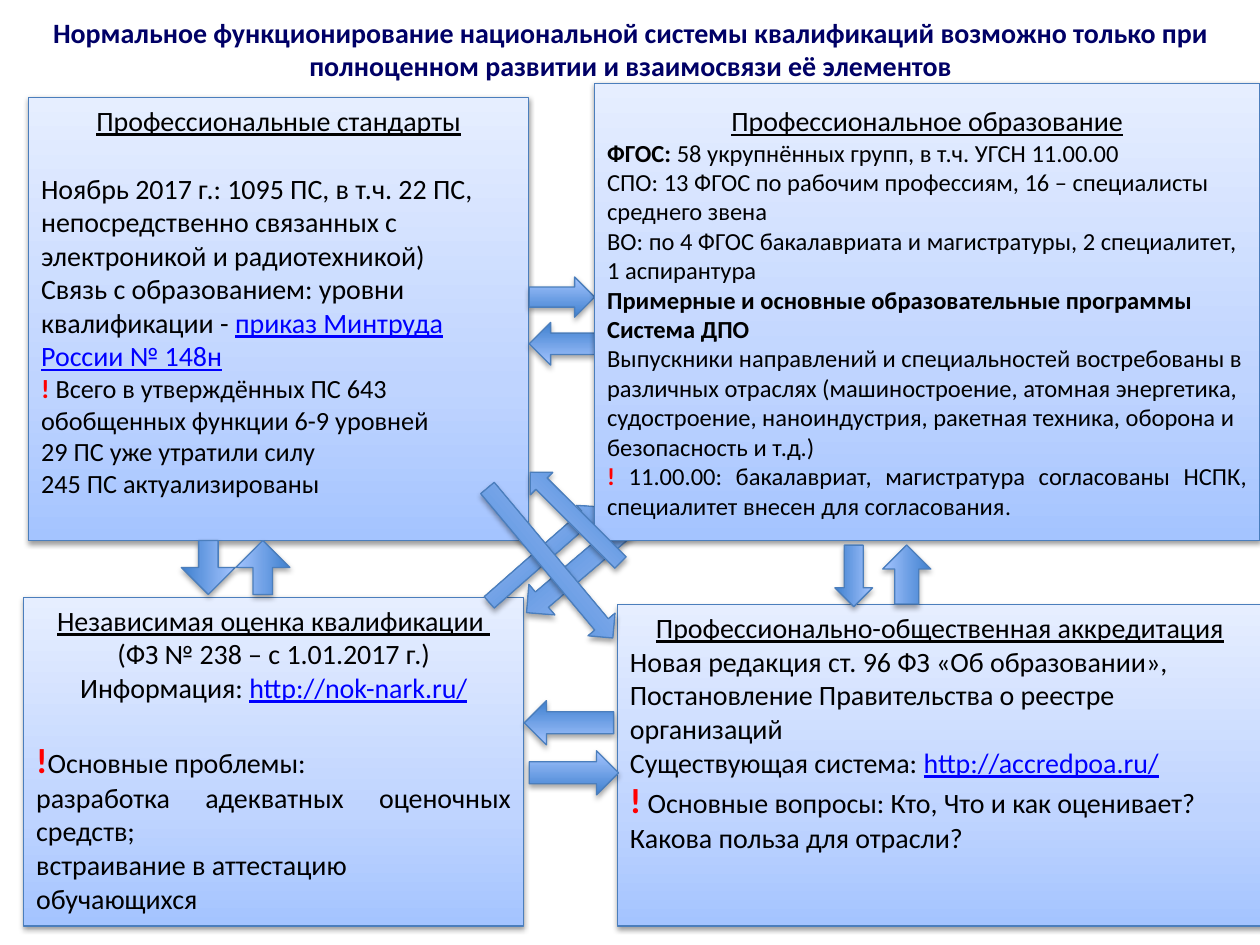
import copy
import lxml.etree
import pptx
import pptx.dml.color
import pptx.enum.shapes
import pptx.enum.text
import pptx.oxml.ns
import pptx.util

Cm = pptx.util.Cm
Pt = pptx.util.Pt
qn = pptx.oxml.ns.qn
KIND = pptx.enum.shapes.MSO_SHAPE
ANCHOR = pptx.enum.text.MSO_ANCHOR
ALIGN = pptx.enum.text.PP_ALIGN
LEFT, MID, JUST = ALIGN.LEFT, ALIGN.CENTER, ALIGN.JUSTIFY

BLACK, RED, BLUE, NAVY = "000000", "FF0000", "0000FF", "000066"
PALE = [(0, "A4C4FF"), (0.35, "BFD4FF"), (1, "E6EEFF")]
DEEP = [(0, "3F80CE"), (1, "A4C4FF")]
GAP = 19.5


def paint(code):
    """Return the colour for a hex string."""
    return pptx.dml.color.RGBColor.from_string(code)


def shade(shape, stops):
    """Fill a shape with an upward gradient."""
    shape.fill.gradient()
    shape.fill.gradient_angle = 90
    items = shape._element.spPr.find(".//" + qn("a:gsLst"))
    for _ in range(len(stops) - len(items)):
        items.append(copy.deepcopy(items[0]))
    for stop, (place, code) in zip(shape.fill.gradient_stops, stops):
        stop.position = place
        stop.color.rgb = paint(code)


def drop(shape, dist, alpha):
    """Give a shape a soft shadow below it."""
    shape.shadow.inherit = False
    root = shape._element.spPr.find(qn("a:effectLst"))
    outer = lxml.etree.SubElement(
        root, qn("a:outerShdw"), blurRad="40000", dist=str(dist),
        dir="5400000", rotWithShape="0")
    tone = lxml.etree.SubElement(outer, qn("a:srgbClr"), val=BLACK)
    lxml.etree.SubElement(tone, qn("a:alpha"), val=str(alpha * 1000))


def dress(shape, stops, dist, alpha):
    """Apply gradient, outline and shadow."""
    shade(shape, stops)
    shape.line.color.rgb = paint("4B7EBC")
    shape.line.width = Pt(0.75)
    drop(shape, dist, alpha)


def write(frame, paras, anchor):
    """Write paragraphs of (align, gap, runs) into a frame."""
    frame.word_wrap = True
    frame.vertical_anchor = anchor
    for rank, (align, gap, runs) in enumerate(paras):
        para = frame.add_paragraph() if rank else frame.paragraphs[0]
        para.alignment = align
        if gap:
            para.space_before = Pt(gap)
        for text, size, code, style in runs:
            run = para.add_run()
            run.text = text
            run.font.name = "Calibri"
            run.font.size = Pt(size)
            run.font.color.rgb = paint(code)
            run.font.bold = "b" in style
            run.font.underline = "u" in style


def title(slide, box, text):
    """Place the slide heading."""
    shape = slide.shapes.add_textbox(*map(Cm, box))
    write(shape.text_frame, [(MID, 0, [(text, 16, NAVY, "b")])], ANCHOR.MIDDLE)


def panel(slide, box, paras, anchor=ANCHOR.TOP):
    """Place a shaded panel with its text."""
    shape = slide.shapes.add_shape(KIND.RECTANGLE, *map(Cm, box))
    dress(shape, PALE, 20000, 38)
    write(shape.text_frame, paras, anchor)


def arrows(slide, box, rows, shaft=0.5):
    """Place arrows of (centre x, centre y, length, width, turn) in a box."""
    left, top = box
    for x, y, length, width, turn in rows:
        shape = slide.shapes.add_shape(
            KIND.RIGHT_ARROW, Cm(left + x - length / 2), Cm(top + y - width / 2),
            Cm(length), Cm(width))
        shape.adjustments[0] = shaft
        shape.rotation = turn
        dress(shape, DEEP, 23000, 35)


def plain(text, size=16, align=LEFT, style=""):
    """Return a black paragraph of one run."""
    return align, 0, [(text, size, BLACK, style)]


def head(text):
    """Return a centred, underlined heading."""
    return plain(text, 16, MID, "u")


NORMS = [
    head("Профессиональные стандарты"),
    (LEFT, GAP, [("Ноябрь 2017 г.: 1095 ПС, в т.ч. 22 ПС, непосредственно связанных с "
                  "электроникой и радиотехникой)", 16, BLACK, "")]),
    (LEFT, 0, [("Связь с образованием: уровни квалификации - ", 16, BLACK, ""),
               ("приказ Минтруда России № 148н", 16, BLUE, "u")]),
    (LEFT, 0, [("! ", 15, RED, "b"),
               ("Всего в утверждённых ПС 643 обобщенных функции 6-9 уровней",
                15, BLACK, "")]),
    plain("29 ПС уже утратили силу", 15),
    plain("245 ПС актуализированы", 15),
]
AUDIT = [
    head("Профессионально-общественная аккредитация"),
    plain("Новая редакция ст. 96 ФЗ «Об образовании», Постановление "
          "Правительства о реестре организаций"),
    (LEFT, 0, [("Существующая система: ", 16, BLACK, ""),
               ("http://accredpoa.ru/", 16, BLUE, "u")]),
    (LEFT, 0, [("!", 20, RED, "b"),
               (" Основные вопросы: Кто, Что и как оценивает? Какова польза "
                "для отрасли?", 16, BLACK, "")]),
]
RATING = [
    head("Независимая оценка квалификации "),
    plain("(ФЗ № 238 – с 1.01.2017 г.)", 16, MID),
    (MID, 0, [("Информация: ", 16, BLACK, ""),
              ("http://nok-nark.ru/", 16, BLUE, "u")]),
    (JUST, GAP, [("!", 20, RED, "b"), ("Основные проблемы: ", 16, BLACK, "")]),
    plain("разработка адекватных оценочных средств;", 16, JUST),
    plain("встраивание в аттестацию обучающихся"),
]
SCHOOL = [
    head("Профессиональное образование"),
    (LEFT, 0, [("ФГОС: ", 14, BLACK, "b"),
               ("58 укрупнённых групп, в т.ч. УГСН 11.00.00", 14, BLACK, "")]),
    plain("СПО: 13 ФГОС по рабочим профессиям, 16 – специалисты среднего звена", 14),
    plain("ВО: по 4 ФГОС бакалавриата и магистратуры, 2 специалитет, "
          "1 аспирантура", 14),
    plain("Примерные и основные образовательные программы", 14, LEFT, "b"),
    plain("Система ДПО", 14, LEFT, "b"),
    plain("Выпускники направлений и специальностей востребованы в различных "
          "отраслях (машиностроение, атомная энергетика, судостроение, "
          "наноиндустрия, ракетная техника, оборона и безопасность и т.д.)", 14),
    (JUST, 0, [("! ", 14, RED, "b"),
               ("11.00.00: бакалавриат, магистратура согласованы НСПК, "
                "специалитет внесен для согласования", 14, BLACK, ""),
               (". ", 13.5, BLACK, "")]),
]


def main():
    """Build and save the slide."""
    deck = pptx.Presentation()
    deck.slide_width, deck.slide_height = Cm(25.4), Cm(19.05)
    slide = deck.slides.add_slide(deck.slide_layouts[6])
    cross = (9.4, 9.3)
    title(slide, (0.03, 0.3, 25.37, 1.37),
          "Нормальное функционирование национальной системы квалификаций возможно "
          "только при полноценном развитии и взаимосвязи её элементов")
    panel(slide, (0.58, 1.96, 10.08, 8.94), NORMS)
    panel(slide, (12.45, 12.19, 13, 6.48), AUDIT)
    panel(slide, (0.48, 12.04, 10.08, 6.63), RATING)
    arrows(slide, (10.67, 5.59), [(0.66, 0.4, 1.32, 0.81, 0),
                                  (0.66, 1.34, 1.32, 0.86, 180)])
    arrows(slide, (10.57, 14.13), [(1, 1.45, 1.8, 0.89, 0),
                                   (0.9, 0.44, 1.8, 0.89, 180)])
    arrows(slide, cross, [(1.56, 1.88, 2.92, 0.61, 318.7),
                          (2.59, 1.88, 3.61, 0.81, 139.6)])
    panel(slide, (11.99, 1.68, 13.41, 9.22), SCHOOL, ANCHOR.MIDDLE)
    arrows(slide, cross, [(1.69, 2.05, 3.94, 0.71, 50.1),
                          (2.2, 1.13, 2.57, 0.64, 225)])
    arrows(slide, (16.8, 11), [(0.41, 0.61, 1.24, 0.76, 90),
                               (1.48, 0.58, 1.19, 0.97, 270)])
    arrows(slide, (3.66, 10.9), [(0.54, 0.54, 1.09, 1.09, 90),
                                 (1.64, 0.54, 1.09, 1.09, 270)], 0.36)
    deck.save("out.pptx")


if __name__ == "__main__":
    main()
